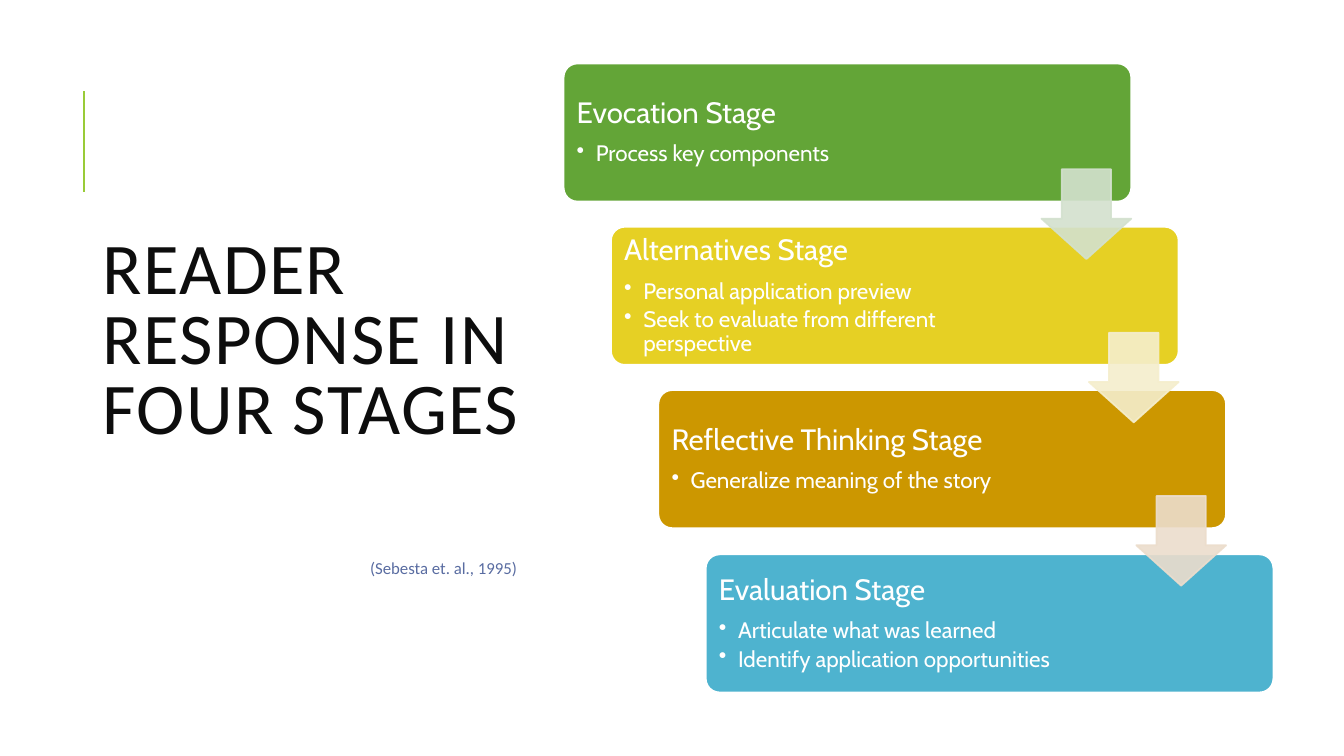
from lxml import etree
from pptx import Presentation
from pptx.dml.color import RGBColor
from pptx.enum.shapes import MSO_CONNECTOR, MSO_SHAPE
from pptx.enum.text import MSO_ANCHOR, PP_ALIGN
from pptx.oxml.ns import qn
from pptx.util import Pt

PX = 9144  # 100 px to the inch
ROUND_RECT = MSO_SHAPE.ROUNDED_RECTANGLE
DOWN_ARROW = MSO_SHAPE.DOWN_ARROW
STRAIGHT = MSO_CONNECTOR.STRAIGHT
TOP, MIDDLE = MSO_ANCHOR.TOP, MSO_ANCHOR.MIDDLE
LEFT = PP_ALIGN.LEFT

WHITE = RGBColor(0xFF, 0xFF, 0xFF)
INK = RGBColor(0x0D, 0x0D, 0x0D)
CITATION = RGBColor(0x59, 0x6C, 0xA1)
ACCENT = RGBColor(0x99, 0xCB, 0x38)
GREEN = RGBColor(0x63, 0xA5, 0x37)
YELLOW = RGBColor(0xE6, 0xD0, 0x24)
OCHRE = RGBColor(0xCC, 0x97, 0x00)
BLUE = RGBColor(0x4E, 0xB3, 0xCF)
PALE_GREEN = RGBColor(0xD3, 0xE1, 0xCE)
PALE_YELLOW = RGBColor(0xF5, 0xEE, 0xCD)
PALE_OCHRE = RGBColor(0xEC, 0xDD, 0xCC)

STAGES = [
    ("Evocation Stage", ["Process key components"], GREEN),
    ("Alternatives Stage",
     ["Personal application preview", "Seek to evaluate from different perspective"], YELLOW),
    ("Reflective Thinking Stage", ["Generalize meaning of the story"], OCHRE),
    ("Evaluation Stage",
     ["Articulate what was learned", "Identify application opportunities"], BLUE),
]
ARROWS = [PALE_GREEN, PALE_YELLOW, PALE_OCHRE]


def px(*lengths):
    return [n * PX for n in lengths]


def stair(i):
    """Offset of step i from the first step."""
    return 47 * i, 487 * i // 3


def add_run(p, text, font, size, color):
    r = p.add_run()
    r.text = text
    r.font.name, r.font.size = font, Pt(size)
    r.font.color.rgb = color
    return r


def set_margins(tf, left, top, right, bottom):
    tf.margin_left, tf.margin_top, tf.margin_right, tf.margin_bottom = px(left, top, right, bottom)


def add_title(s):
    title = s.shapes.title
    title.left, title.top, title.width, title.height = px(92, 63, 468, 624)
    tf = title.text_frame
    tf.word_wrap, tf.vertical_anchor = True, TOP
    set_margins(tf, 10, 174, 10, 5)
    p = tf.paragraphs[0]
    p.alignment, p.line_spacing = LEFT, 0.8
    r = add_run(p, "READER RESPONSE IN FOUR STAGES", "Calibri", 52, INK)
    r.font._element.set("spc", "100")
    p = tf.add_paragraph()
    p.alignment, p.line_spacing, p.space_before = LEFT, 0.8, Pt(81)
    p._p.get_or_add_pPr().set("marL", str(265 * PX))
    add_run(p, "(Sebesta et. al., 1995)", "Calibri", 12, CITATION)


def add_accent_line(s):
    line = s.shapes.add_connector(STRAIGHT, *px(83, 190, 83, 90))
    line.line.color.rgb, line.line.width = ACCENT, Pt(1.5)
    etree.SubElement(line._element.spPr, qn("a:effectLst"))


def add_block(s, kind, box, adjustments, fill, outline):
    sp = s.shapes.add_shape(kind, *px(*box))
    sp.shadow.inherit = False
    for i, value in enumerate(adjustments):
        sp.adjustments[i] = value
    sp.fill.solid()
    sp.fill.fore_color.rgb = fill
    sp.line.color.rgb, sp.line.width = outline, Pt(1.25)
    return sp


def add_bullet(p):
    pPr = p._p.get_or_add_pPr()
    pPr.set("marL", str(19 * PX))
    pPr.set("indent", str(-19 * PX))
    etree.SubElement(pPr, qn("a:buChar"), char="•")


def add_stage(s, i, heading, points, color):
    dx, dy = stair(i)
    add_block(s, ROUND_RECT, (559 + dx, 63 + dy, 563, 137), [0.1], color, WHITE)
    tf = s.shapes.add_textbox(*px(563 + dx, 67 + dy, 418, 129)).text_frame
    tf.word_wrap, tf.vertical_anchor = True, MIDDLE
    set_margins(tf, 9, 9, 9, 9)
    p = tf.paragraphs[0]
    p.line_spacing, p.space_after = 0.9, Pt(9)
    add_run(p, heading, "Cabin", 21, WHITE)
    for point in points:
        p = tf.add_paragraph()
        p.level, p.line_spacing, p.space_after = 1, 0.9, Pt(3)
        add_bullet(p)
        add_run(p, point, "Cabin", 16, WHITE)


def add_arrow(s, i, color):
    dx, dy = stair(i)
    sp = add_block(s, DOWN_ARROW, (1033 + dx, 168 + dy, 89, 89), [0.55, 0.45], color, color)
    for clr in sp._element.spPr.iter(qn("a:srgbClr")):
        etree.SubElement(clr, qn("a:alpha"), val="90000")


def main():
    prs = Presentation()
    prs.slide_width, prs.slide_height = px(1333, 750)
    s = prs.slides.add_slide(prs.slide_layouts.get_by_name("Title Only"))
    add_accent_line(s)
    add_title(s)
    for i, (heading, points, color) in enumerate(STAGES):
        add_stage(s, i, heading, points, color)
    for i, color in enumerate(ARROWS):
        add_arrow(s, i, color)
    prs.save("out.pptx")


if __name__ == "__main__":
    main()
